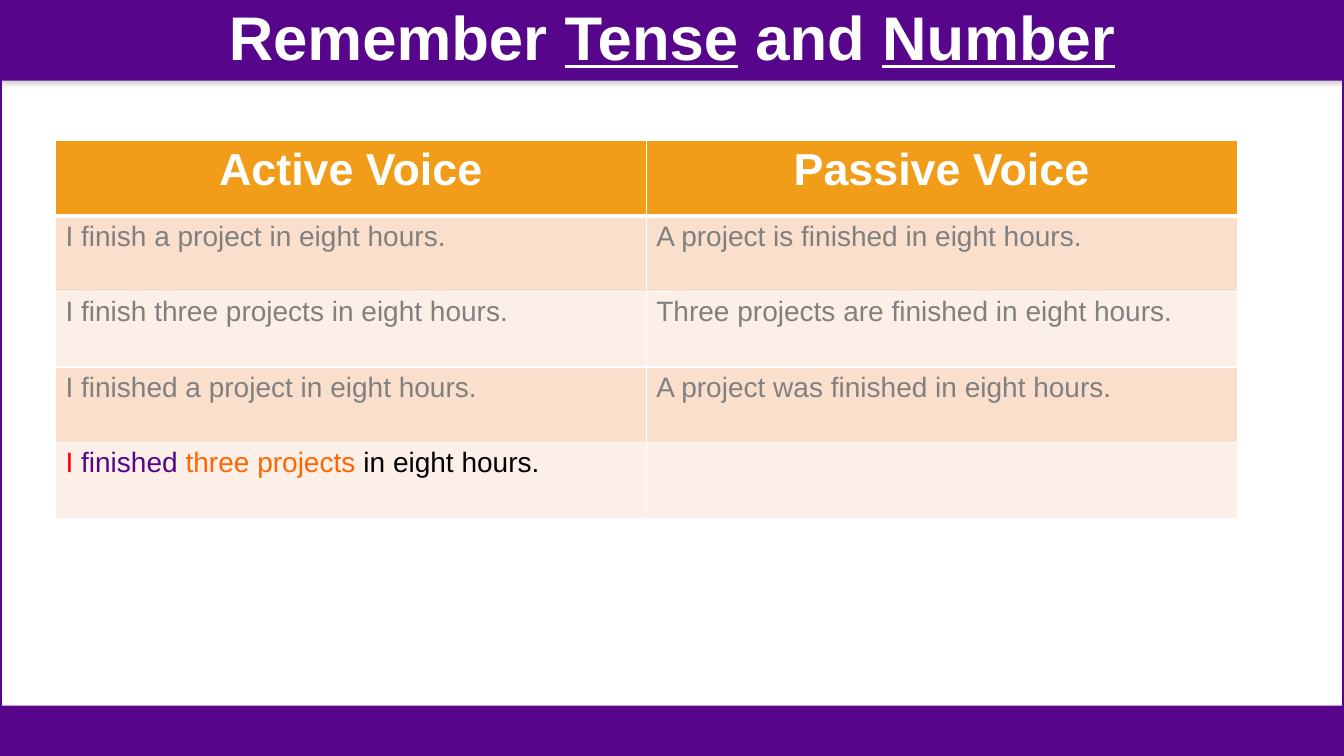
from lxml import etree
from pptx import Presentation
from pptx import util as u
from pptx.dml.color import RGBColor
from pptx.enum import shapes, text
from pptx.oxml.ns import qn

Inches = u.Inches
WIDTH, HEIGHT = 13.33, 7.5
PURPLE, WHITE, GREY = "57068C", "FFFFFF", "808080"
ORANGE, PEACH, PALE_PEACH = "F19D19", "FADFCC", "FCEFE8"

HEADINGS = ["Active Voice", "Passive Voice"]
EXAMPLES = [
    ("I finish a project in eight hours.", "A project is finished in eight hours."),
    ("I finish three projects in eight hours.", "Three projects are finished in eight hours."),
    ("I finished a project in eight hours.", "A project was finished in eight hours."),
]
CURRENT_EXAMPLE = [
    ("I ", "FF0000"),
    ("finished ", PURPLE),
    ("three projects", "FF6600"),
    (" in eight hours.", "000000"),
]


def color(value):
    return RGBColor.from_string(value)


def add_run(para, words, size, hue, bold=False, underline=False):
    span = para.add_run()
    span.text = words
    span.font.name = "Arial"
    span.font.size = u.Pt(size)
    span.font.bold = bold
    span.font.underline = underline
    span.font.color.rgb = color(hue)


def add_rectangle(page, top, height):
    box = page.shapes.add_shape(shapes.MSO_SHAPE.RECTANGLE, 0, Inches(top),
                                Inches(WIDTH), Inches(height))
    box.shadow.inherit = False
    return box


def add_bar(page, top, height):
    bar = add_rectangle(page, top, height)
    bar.fill.solid()
    bar.fill.fore_color.rgb = color(PURPLE)
    bar.line.fill.background()
    # Soft shadow below the bar
    effects = bar.element.spPr.find(qn("a:effectLst"))
    shadow = etree.SubElement(effects, qn("a:outerShdw"), blurRad=str(u.Pt(3.1)),
                              dist=str(u.Pt(1.8)), dir="5400000", rotWithShape="0")
    hue = etree.SubElement(shadow, qn("a:srgbClr"), val=GREY)
    etree.SubElement(hue, qn("a:alpha"), val="35000")


def add_frame(page):
    frame = add_rectangle(page, 0, HEIGHT)
    frame.fill.background()
    frame.line.color.rgb = color(PURPLE)
    frame.line.width = u.Pt(2.25)


def set_title(page, parts):
    title = page.shapes.title
    title.left, title.top = Inches(0), Inches(0)
    title.width, title.height = Inches(WIDTH), Inches(0.8)
    title.element.getparent().append(title.element)  # in front of the top bar
    frame = title.text_frame
    frame.word_wrap = True
    frame.auto_size = text.MSO_AUTO_SIZE.NONE
    frame.vertical_anchor = text.MSO_ANCHOR.MIDDLE
    para = frame.paragraphs[0]
    para.alignment = text.PP_ALIGN.CENTER
    para.line_spacing = 0.9
    for words, underline in parts:
        add_run(para, words, 44, WHITE, bold=True, underline=underline)


def style_cell(cell, fill, top=1, bottom=1):
    properties = cell._tc.get_or_add_tcPr()
    for side, width in (("L", 1), ("R", 1), ("T", top), ("B", bottom)):
        border = etree.SubElement(properties, qn(f"a:ln{side}"), w=str(u.Pt(width)))
        solid = etree.SubElement(border, qn("a:solidFill"))
        etree.SubElement(solid, qn("a:srgbClr"), val=WHITE)
    cell.fill.solid()
    cell.fill.fore_color.rgb = color(fill)


def add_voice_table(page):
    body = [[[(words, GREY)] for words in pair] for pair in EXAMPLES]
    body.append([CURRENT_EXAMPLE, []])
    row_count = len(body) + 1
    table = page.shapes.add_table(row_count, 2, Inches(0.55), Inches(1.39),
                                  Inches(11.72), Inches(0.75 * row_count)).table
    # Heading row
    for column, heading in enumerate(HEADINGS):
        cell = table.cell(0, column)
        style_cell(cell, ORANGE, bottom=3)
        para = cell.text_frame.paragraphs[0]
        para.alignment = text.PP_ALIGN.CENTER
        add_run(para, heading, 32, WHITE, bold=True)
    # Banded example rows
    for row, sentences in enumerate(body, start=1):
        for column, parts in enumerate(sentences):
            cell = table.cell(row, column)
            style_cell(cell, PEACH if row % 2 else PALE_PEACH, top=3 if row == 1 else 1)
            for words, hue in parts:
                add_run(cell.text_frame.paragraphs[0], words, 20, hue)


def main():
    deck = Presentation()
    deck.slide_width, deck.slide_height = Inches(WIDTH), Inches(HEIGHT)
    page = deck.slides.add_slide(deck.slide_layouts.get_by_name("Title Only"))

    # Page frame and bars
    add_bar(page, 0, 0.8)
    add_frame(page)
    add_bar(page, 7, 0.5)

    # Content
    set_title(page, [("Remember ", False), ("Tense", True), (" and ", False), ("Number", True)])
    add_voice_table(page)
    deck.save("out.pptx")


if __name__ == "__main__":
    main()
